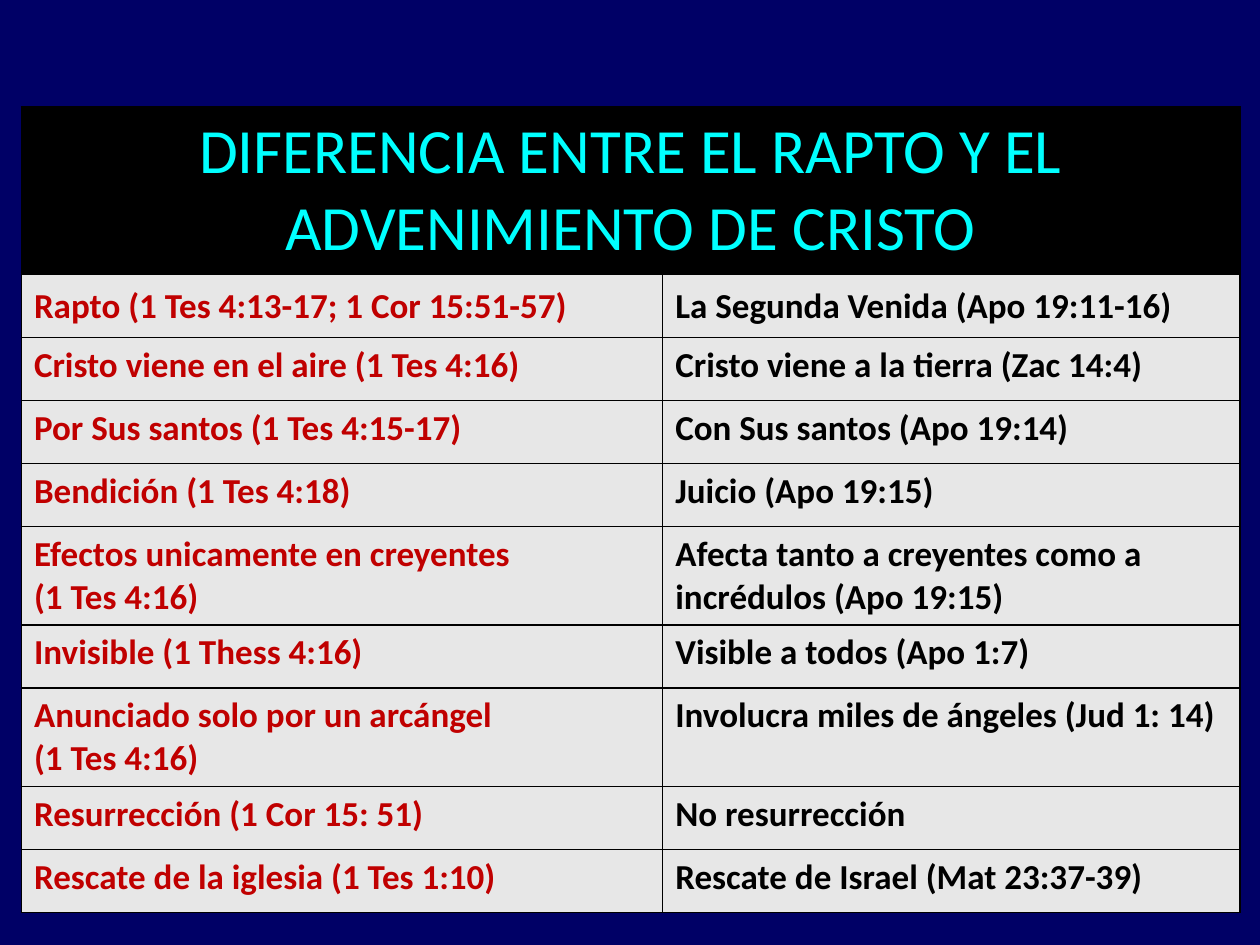
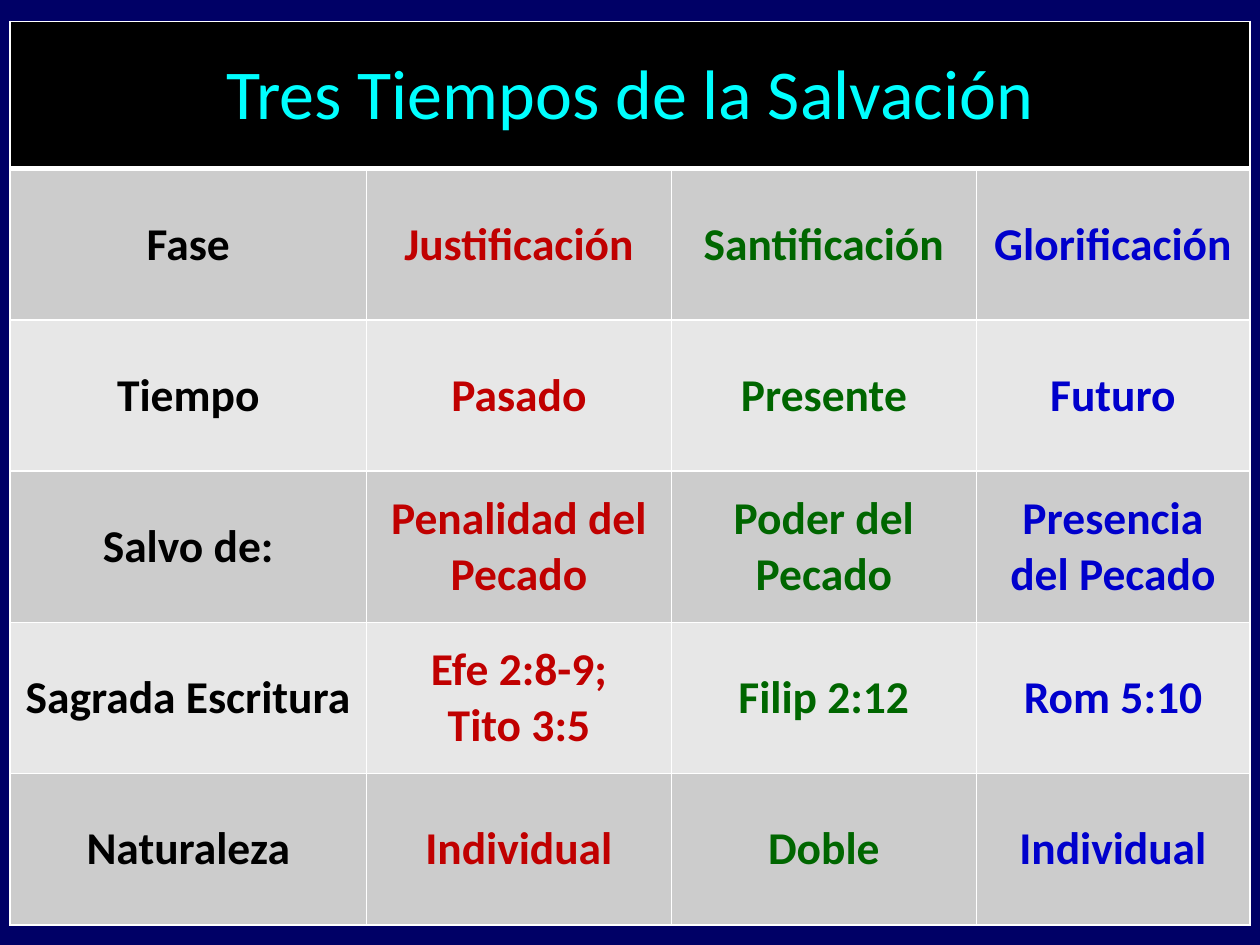
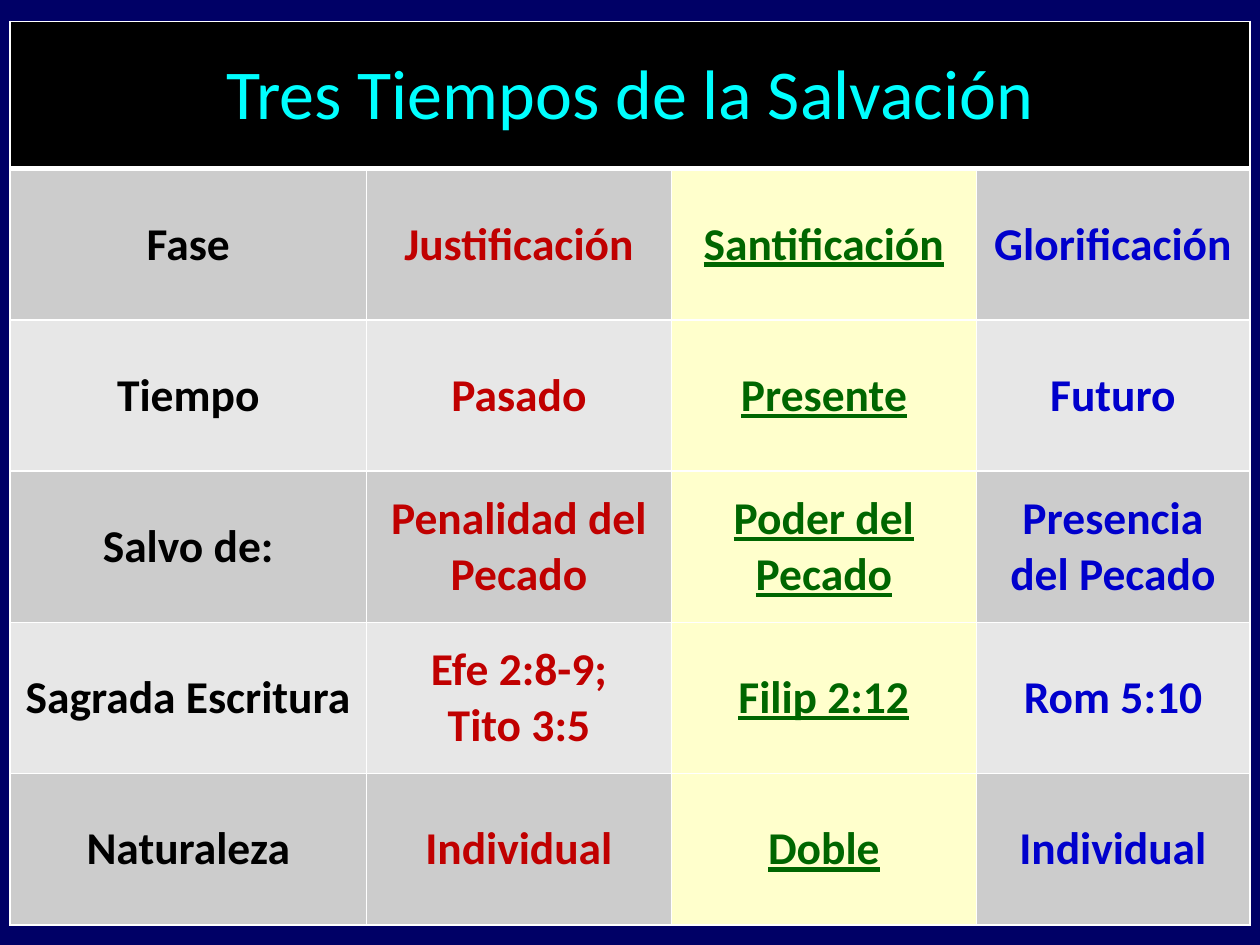
from lxml import etree
from pptx import Presentation
from pptx.dml.color import RGBColor
from pptx.enum import text
from pptx.oxml import ns
from pptx.util import Inches, Pt

# Shared look
FONT = "Calibri"
NAVY, BLACK, WHITE, CYAN = "000066", "000000", "FFFFFF", "00FFFF"
RED, GREEN, BLUE = "C00000", "006600", "0000CC"
LIGHT, MEDIUM, HIGHLIGHT = "E7E7E7", "CCCCCC", "FFFFCC"

# Content ("\v" is a line break)
RAPTURE_TITLE = "DIFERENCIA ENTRE EL RAPTO Y EL ADVENIMIENTO DE CRISTO"
RAPTURE_ROWS = [
    ("Rapto (1 Tes 4:13-17; 1 Cor 15:51-57)", "La Segunda Venida (Apo 19:11-16)"),
    ("Cristo viene en el aire (1 Tes 4:16)", "Cristo viene a la tierra (Zac 14:4)"),
    ("Por Sus santos (1 Tes 4:15-17)", "Con Sus santos (Apo 19:14)"),
    ("Bendición (1 Tes 4:18)", "Juicio (Apo 19:15)"),
    ("Efectos unicamente en creyentes\v(1 Tes 4:16)",
     "Afecta tanto a creyentes como a incrédulos (Apo 19:15)"),
    ("Invisible (1 Thess 4:16)", "Visible a todos (Apo 1:7)"),
    ("Anunciado solo por un arcángel\v(1 Tes 4:16)",
     "Involucra miles de ángeles (Jud 1: 14)"),
    ("Resurrección (1 Cor 15: 51)", "No resurrección"),
    ("Rescate de la iglesia (1 Tes 1:10)", "Rescate de Israel (Mat 23:37-39)"),
]
SALVATION_TITLE = "Tres Tiempos de la Salvación"
SALVATION_ROWS = [
    ("Fase", "Justificación", "Santificación", "Glorificación"),
    ("Tiempo", "Pasado", "Presente", "Futuro"),
    ("Salvo de:", "Penalidad del Pecado", "Poder del Pecado", "Presencia del Pecado"),
    ("Sagrada Escritura", "Efe 2:8-9;\vTito 3:5", "Filip 2:12", "Rom 5:10"),
    ("Naturaleza", "Individual", "Doble", "Individual"),
]
SANCTIFICATION = 2  # column highlighted on the last slide


def rgb(color):
    return RGBColor.from_string(color)


def set_borders(cell, color, bottom=1):
    properties = cell._tc.get_or_add_tcPr()
    for side in "LRTB":
        width = bottom if side == "B" else 1
        line = etree.SubElement(properties, ns.qn(f"a:ln{side}"), w=str(Pt(width)))
        fill = etree.SubElement(line, ns.qn("a:solidFill"))
        etree.SubElement(fill, ns.qn("a:srgbClr"), val=color)


def write_cell(cell, words, *, size, color, fill, bold=True, underline=False,
               centred=True, middle=True):
    cell.fill.solid()
    cell.fill.fore_color.rgb = rgb(fill)
    cell.vertical_anchor = text.MSO_ANCHOR.MIDDLE if middle else text.MSO_ANCHOR.TOP
    para = cell.text_frame.paragraphs[0]
    para.text = words
    para.alignment = text.PP_ALIGN.CENTER if centred else text.PP_ALIGN.LEFT
    for span in para.runs:
        span.font.name = FONT
        span.font.size = Pt(size)
        span.font.bold = bold
        span.font.underline = underline
        span.font.color.rgb = rgb(color)


def add_titled_table(deck, title, left, top, widths, heights, *, title_size,
                     border, title_bottom=1):
    """Add a page with a bordered table whose first row is one merged title."""
    page = deck.slides.add_slide(deck.slide_layouts[6])
    page.background.fill.solid()
    page.background.fill.fore_color.rgb = rgb(NAVY)
    table = page.shapes.add_table(
        len(heights), len(widths), Inches(left), Inches(top),
        Inches(sum(widths)), Inches(sum(heights))).table
    table.first_row = table.horz_banding = False
    for column, width in zip(table.columns, widths):
        column.width = Inches(width)
    for index, (row, height) in enumerate(zip(table.rows, heights)):
        row.height = Inches(height)
        for cell in row.cells:
            set_borders(cell, border, bottom=1 if index else title_bottom)
    table.cell(0, 0).merge(table.cell(0, len(widths) - 1))
    write_cell(table.cell(0, 0), title, size=title_size, color=CYAN, fill=BLACK,
               bold=False)
    return table


def add_rapture_page(deck):
    # Rows that hold two lines are taller
    heights = [1.33] + [0.78 if "\v" in row[0] else 0.5 for row in RAPTURE_ROWS]
    table = add_titled_table(deck, RAPTURE_TITLE, 0.17, 0.85, [5.09, 4.58], heights,
                             title_size=36, border=BLACK)
    for r, row in enumerate(RAPTURE_ROWS, 1):
        for c, (words, color) in enumerate(zip(row, (RED, BLACK))):
            write_cell(table.cell(r, c), words, size=20, color=color, fill=LIGHT,
                       centred=False, middle=r == 1)


def add_salvation_page(deck, highlighted=None):
    heights = [1.17] + [1.2] * len(SALVATION_ROWS)
    table = add_titled_table(deck, SALVATION_TITLE, 0.08, 0.17,
                             [2.83, 2.42, 2.42, 2.17], heights,
                             title_size=40, border=WHITE, title_bottom=3)
    for r, row in enumerate(SALVATION_ROWS, 1):
        band = MEDIUM if r % 2 else LIGHT
        for c, (words, color) in enumerate(zip(row, (BLACK, RED, GREEN, BLUE))):
            marked = c == highlighted
            write_cell(table.cell(r, c), words, size=26, color=color,
                       fill=HIGHLIGHT if marked else band, underline=marked)


def main():
    deck = Presentation()
    deck.slide_width, deck.slide_height = Inches(10), Inches(7.5)
    add_rapture_page(deck)
    add_salvation_page(deck)
    add_salvation_page(deck, highlighted=SANCTIFICATION)
    deck.save("out.pptx")


if __name__ == "__main__":
    main()
